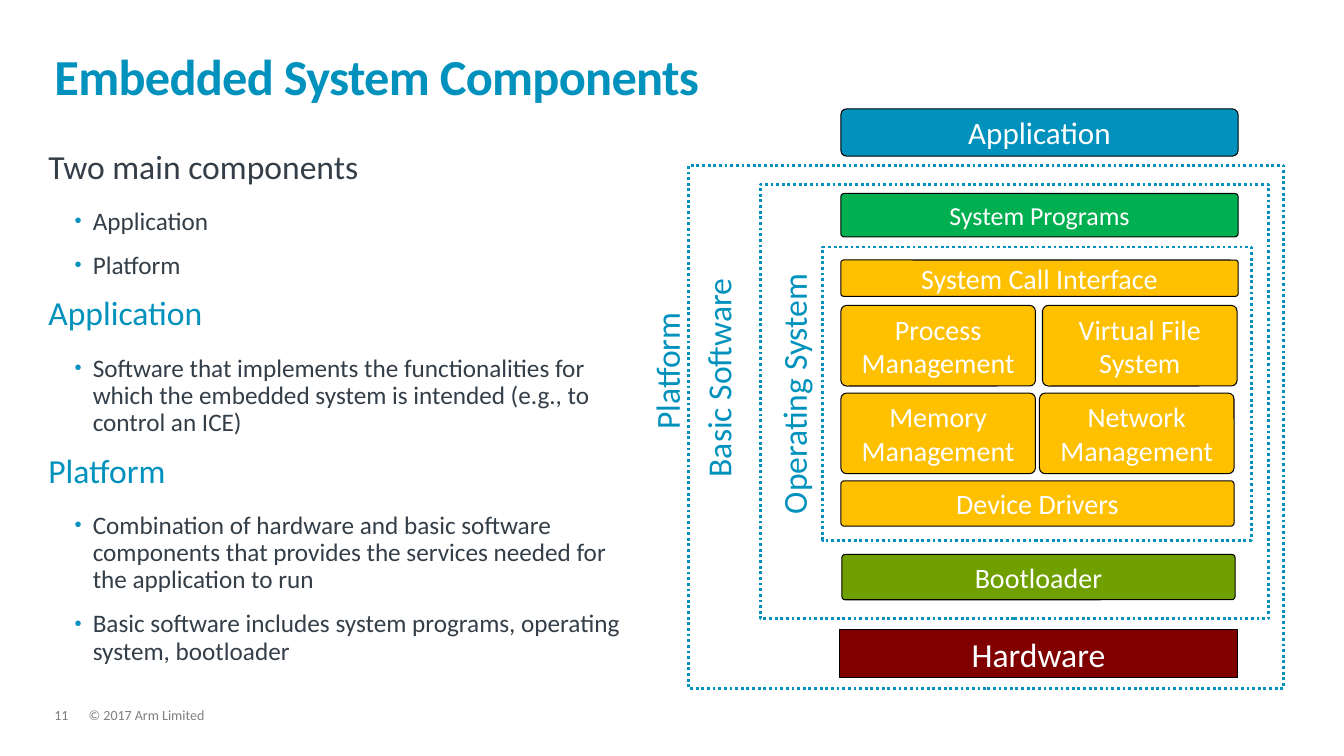
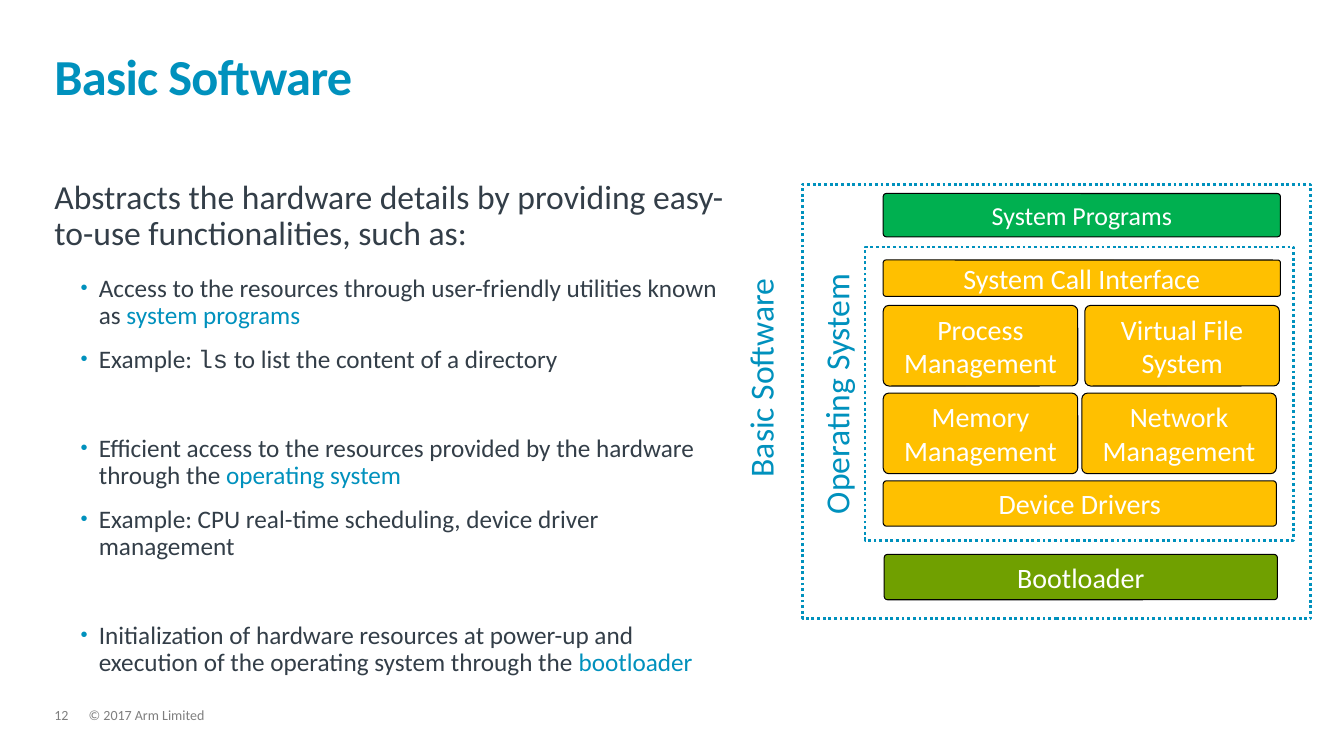
from lxml import etree
from pptx import Presentation
from pptx.dml.color import RGBColor
from pptx.enum.dml import MSO_LINE
from pptx.enum.shapes import MSO_SHAPE
from pptx.enum.text import MSO_ANCHOR, PP_ALIGN
from pptx.oxml.ns import qn
from pptx.util import Pt

RECT, ROUND = MSO_SHAPE.RECTANGLE, MSO_SHAPE.ROUNDED_RECTANGLE
TOP, MIDDLE, BOTTOM = MSO_ANCHOR.TOP, MSO_ANCHOR.MIDDLE, MSO_ANCHOR.BOTTOM
LEFT, CENTER = PP_ALIGN.LEFT, PP_ALIGN.CENTER
DOTTED = MSO_LINE.ROUND_DOT

EMU_PER_PX = 9144  # 100 px to the inch
SLIDE_SIZE = (1333, 750)
SANS, MONO = "Calibri", "Courier New"
COLORS = {
    "blue": "0091BD", "ink": "333E48", "grey": "7F7F7F", "white": "FFFFFF",
    "black": "000000", "green": "00B050", "yellow": "FFC000",
    "olive": "70A000", "maroon": "800000",
}

# Text styles: font values, then paragraph values
STYLES = {
    "title": ({"size": Pt(36), "bold": True}, {"line_spacing": 0.85}),
    "footer": ({"size": Pt(10)}, {"line_spacing": 0.9, "space_after": Pt(6)}),
    "heading": ({"size": Pt(24)}, {"line_spacing": 0.9, "space_after": Pt(16)}),
    "bullet": ({"size": Pt(18)}, {"line_spacing": 0.9, "space_after": Pt(12)}),
    "group end": ({"size": Pt(18)}, {"line_spacing": 0.9, "space_after": Pt(44)}),
    "side": ({"size": Pt(24)}, {}),
}
BULLETED = ("bullet", "group end")
BULLET_INDENT, BULLET_HANG = 44, 18

# Shared parts
TITLE_BOX = (54, 32, 1223, 73)
NUMBER_BOX = (54, 703, 34, 15)
COPYRIGHT_BOX = (88, 703, 913, 15)
COPYRIGHT = "© 2017 Arm Limited"

# Software stack: (text, box, fill, text size)
STACK_X, ROW_Y, CELL_W, CELL_H, ROW_GAP = 834, 303, 193, 80, 7
ROW_2_Y = ROW_Y + CELL_H + ROW_GAP
DRIVERS_Y = ROW_2_Y + CELL_H + ROW_GAP
STACK_BLOCKS = [
    ("System Programs", (STACK_X, 192, 394, 43), "green", 18.5),
    ("System Call Interface", (STACK_X, 258, 394, 36), "yellow", 20),
    ("Process Management", (STACK_X, ROW_Y, CELL_W, CELL_H), "yellow", 20),
    ("Virtual File System", (1034, ROW_Y, CELL_W, CELL_H), "yellow", 20),
    ("Memory Management", (STACK_X, ROW_2_Y, CELL_W, CELL_H), "yellow", 20),
    ("Network Management", (1031, ROW_2_Y, CELL_W, CELL_H), "yellow", 20),
    ("Device Drivers", (STACK_X, DRIVERS_Y, 390, 45), "yellow", 20),
    ("Bootloader", (835, 550, 390, 45), "olive", 20),
]
STACK_FRAMES = [(816, 245, 425, 291), (754, 183, 504, 431)]
STACK_LABELS = [
    ("Operating System", (684, 327, 266, 100), LEFT),
    ("Basic Software", (609, 325, 266, 100), CENTER),
]
# Parts around the stack on the components slide
HARDWARE = ("Hardware", (833, 625, 394, 47), "maroon", 24)
APPLICATION = ("Application", (834, 108, 394, 47), "blue", 22.2)
PLATFORM_FRAME = (683, 164, 590, 519)
PLATFORM_LABEL = ("Platform", (626, 311, 130, 100), LEFT)

# Body paragraphs: (style, runs); a run is (text, colour, font)
COMPONENTS_BODY = [
    ("heading", [("Two main components", "ink", SANS)]),
    ("bullet", [("Application", "ink", SANS)]),
    ("bullet", [("Platform", "ink", SANS)]),
    ("heading", [("Application", "blue", SANS)]),
    ("bullet", [("Software that implements the functionalities for which the embedded "
                 "system is intended (e.g., to control an ICE)", "ink", SANS)]),
    ("heading", [("Platform", "blue", SANS)]),
    ("bullet", [("Combination of hardware and basic software components that provides "
                 "the services needed for the application to run", "ink", SANS)]),
    ("bullet", [("Basic software includes system programs, operating system, bootloader",
                 "ink", SANS)]),
]
SOFTWARE_BODY = [
    ("heading", [("Abstracts the hardware details by providing easy-to-use "
                  "functionalities, such as:", "ink", SANS)]),
    ("bullet", [("Access to the resources through user-friendly utilities known as ",
                 "ink", SANS), ("system programs", "blue", SANS)]),
    ("group end", [("Example: ", "ink", SANS), ("ls", "ink", MONO),
                   (" to list the content of a directory", "ink", SANS)]),
    ("bullet", [("Efficient access to the resources provided by the hardware through the ",
                 "ink", SANS), ("operating system", "blue", SANS)]),
    ("group end", [("Example: CPU real-time scheduling, device driver management",
                    "ink", SANS)]),
    ("bullet", [("Initialization of hardware resources at power-up and execution of the "
                 "operating system through the ", "ink", SANS),
                ("bootloader", "blue", SANS)]),
]
SLIDES = [
    {"number": "11", "title": "Embedded System Components", "body": COMPONENTS_BODY,
     "body_box": (48, 149, 581, 447), "stack_shift": 0, "platform": True},
    {"number": "12", "title": "Basic Software", "body": SOFTWARE_BODY,
     "body_box": (54, 179, 672, 447), "stack_shift": 42, "platform": False},
]


def px(value):
    return value * EMU_PER_PX


def rgb(color):
    return RGBColor.from_string(COLORS[color])


def shifted(box, dx):
    return (box[0] + dx, *box[1:])


def apply_values(target, values):
    for name, value in values.items():
        setattr(target, name, value)


def add_run(paragraph, text, color, font, values):
    run = paragraph.add_run()
    run.text = text
    run.font.name = font
    run.font.color.rgb = rgb(color)
    apply_values(run.font, values)


def add_bullet(paragraph):
    props = paragraph._p.get_or_add_pPr()
    props.set("marL", str(px(BULLET_INDENT)))
    props.set("indent", str(px(-BULLET_HANG)))
    tint = etree.SubElement(props, qn("a:buClr"))
    etree.SubElement(tint, qn("a:srgbClr"), val=COLORS["blue"])
    etree.SubElement(props, qn("a:buSzPct"), val="80000")
    etree.SubElement(props, qn("a:buFont"), typeface="Arial")
    etree.SubElement(props, qn("a:buChar"), char="•")


def add_text(slide, box, paragraphs, anchor=TOP, wrap=True):
    text_box = slide.shapes.add_textbox(*map(px, box))
    frame = text_box.text_frame
    apply_values(frame, {
        "margin_left": 0, "margin_right": 0, "margin_top": 0, "margin_bottom": 0,
        "word_wrap": wrap, "vertical_anchor": anchor,
    })
    for index, (style, runs) in enumerate(paragraphs):
        paragraph = frame.add_paragraph() if index else frame.paragraphs[0]
        font_values, paragraph_values = STYLES[style]
        if style in BULLETED:
            add_bullet(paragraph)
        apply_values(paragraph, paragraph_values)
        for text, color, font in runs:
            add_run(paragraph, text, color, font, font_values)
    return text_box


def add_block(slide, text, box, fill, size, outline=ROUND, corner=0.072):
    block = slide.shapes.add_shape(outline, *map(px, box))
    block.shadow.inherit = False
    if outline == ROUND:
        block.adjustments[0] = corner
    block.fill.solid()
    block.fill.fore_color.rgb = rgb(fill)
    block.line.color.rgb = rgb("black")
    block.line.width = Pt(0.75)
    apply_values(block.text_frame, {"word_wrap": True, "vertical_anchor": MIDDLE})
    paragraph = block.text_frame.paragraphs[0]
    paragraph.alignment = CENTER
    add_run(paragraph, text, "white", SANS, {"size": Pt(size)})


def add_dotted_frame(slide, box):
    border = slide.shapes.add_shape(RECT, *map(px, box))
    border.shadow.inherit = False
    border.fill.background()
    border.line.color.rgb = rgb("blue")
    apply_values(border.line, {"width": Pt(2), "dash_style": DOTTED})


def add_side_label(slide, text, box, alignment):
    label = add_text(slide, box, [("side", [(text, "blue", SANS)])], wrap=False)
    label.text_frame.paragraphs[0].alignment = alignment
    label.rotation = 270


def add_stack(slide, dx):
    for text, box, fill, size in STACK_BLOCKS:
        add_block(slide, text, shifted(box, dx), fill, size)
    for box in STACK_FRAMES:
        add_dotted_frame(slide, shifted(box, dx))
    for text, box, alignment in STACK_LABELS:
        add_side_label(slide, text, shifted(box, dx), alignment)


def add_platform(slide):
    add_block(slide, *HARDWARE, outline=RECT)
    add_block(slide, *APPLICATION, corner=0.126)
    add_dotted_frame(slide, PLATFORM_FRAME)
    add_side_label(slide, *PLATFORM_LABEL)


def build_slide(deck, content):
    slide = deck.slides.add_slide(deck.slide_layouts[6])
    # Footer
    for text, box in ((COPYRIGHT, COPYRIGHT_BOX), (content["number"], NUMBER_BOX)):
        add_text(slide, box, [("footer", [(text, "grey", SANS)])])
    # Title, with slightly tightened letters
    title = add_text(slide, TITLE_BOX, [("title", [(content["title"], "blue", SANS)])],
                     anchor=BOTTOM)
    title.text_frame.paragraphs[0].runs[0]._r.get_or_add_rPr().set("spc", "-50")
    # Body and diagram
    add_text(slide, content["body_box"], content["body"])
    if content["platform"]:
        add_platform(slide)
    add_stack(slide, content["stack_shift"])


def main():
    deck = Presentation()
    deck.slide_width, deck.slide_height = map(px, SLIDE_SIZE)
    for content in SLIDES:
        build_slide(deck, content)
    deck.save("out.pptx")


if __name__ == "__main__":
    main()
